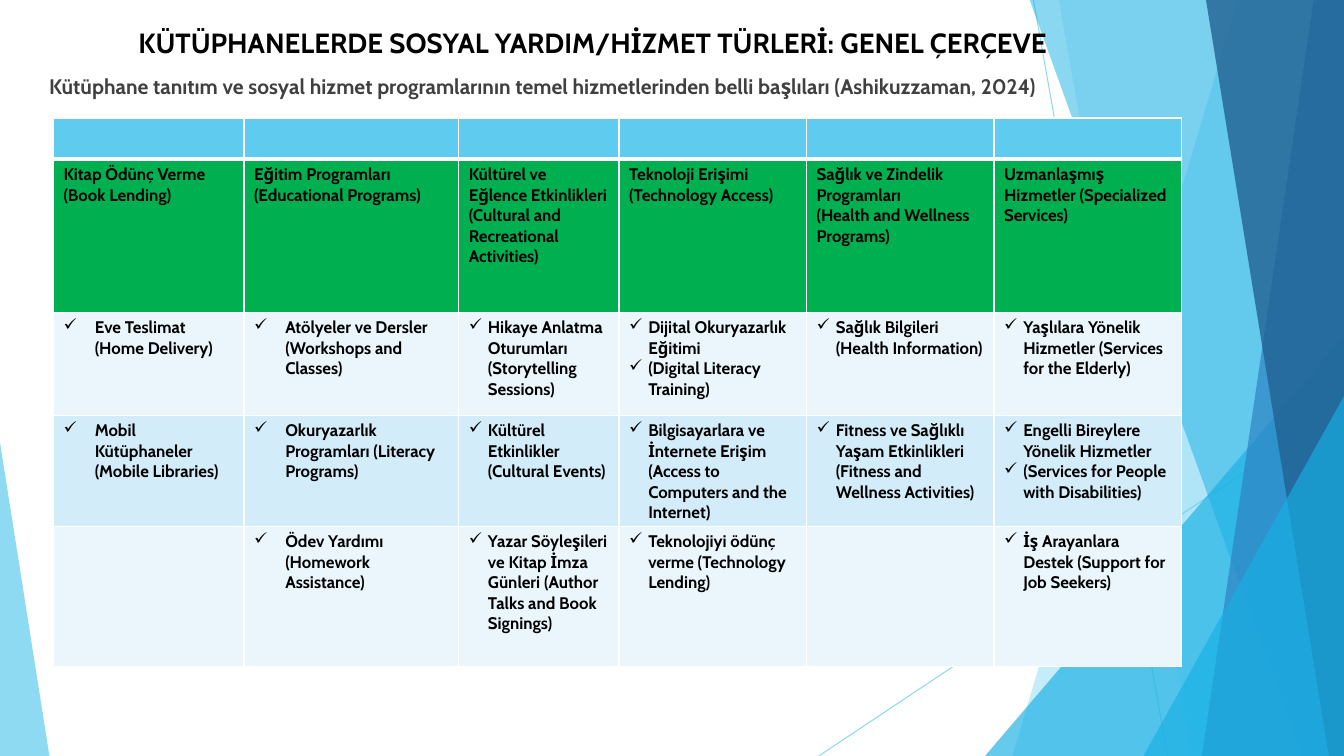
from dataclasses import dataclass

from lxml.etree import SubElement
from pptx import Presentation
from pptx.dml.color import RGBColor
from pptx.enum.shapes import MSO_CONNECTOR, MSO_SHAPE
from pptx.enum.text import MSO_ANCHOR, PP_ALIGN
from pptx.oxml import parse_xml
from pptx.oxml.ns import nsdecls, qn
from pptx.util import Inches, Pt

FONT = "Cabin"
COLORS = {
    "sky": "5FCBEF", "cyan": "17B0E4", "blue": "2E83C3", "navy": "226292",
    "green": "00B050", "pale": "EAF6FC", "light": "D2ECF9",
    "white": "FFFFFF", "black": "000000", "gray": "404040",
}
TOP, BOTTOM, RIGHT = -0.01, 7.5, 13.33


@dataclass
class Ray:
    start: tuple[float, float]
    end: tuple[float, float]


@dataclass
class Band:
    top_left: float
    bottom_left: float
    color: str
    opacity: int


@dataclass
class Triangle:
    left: float
    top: float
    width: float
    apex: float
    color: str
    opacity: int


@dataclass
class Row:
    height: float
    color: str
    texts: list[str]
    bulleted: bool = True


DECORATION = [
    Ray((10.25, 0), (11.58, 7.5)),
    Ray((13.33, 4.03), (8.12, 7.5)),
    Band(12.28, 10.04, "sky", 36),
    Band(10.5, 11.83, "sky", 20),
    Triangle(9.77, 3.33, 3.56, 1, "cyan", 66),
    Band(10.21, 12.91, "cyan", 50),
    Band(13.03, 11.92, "blue", 70),
    Band(11.96, 13.18, "navy", 80),
    Triangle(11.34, 3.93, 1.99, 1, "cyan", 66),
    Triangle(0, 4.39, 0.49, 0, "sky", 70),
]
COLUMN_WIDTHS = [1.89, 2.13, 1.59, 1.86, 1.86, 1.86]
COLUMN_INDENTS = [0.31, 0.31, 0.19, 0.19, 0.19, 0.19]
ROWS = [
    Row(0.41, "sky", [""] * 6, False),
    Row(1.52, "green", [
        "Kitap Ödünç Verme\n(Book Lending)",
        "Eğitim Programları (Educational Programs)",
        "Kültürel ve Eğlence Etkinlikleri (Cultural and Recreational Activities)",
        "Teknoloji Erişimi\n(Technology Access)",
        "Sağlık ve Zindelik Programları\n(Health and Wellness Programs)",
        "Uzmanlaşmış Hizmetler (Specialized Services)",
    ], False),
    Row(1.02, "pale", [
        "Eve Teslimat (Home Delivery)",
        "Atölyeler ve Dersler (Workshops and Classes)",
        "Hikaye Anlatma Oturumları (Storytelling Sessions)",
        "Dijital Okuryazarlık Eğitimi\n(Digital Literacy Training)",
        "Sağlık Bilgileri (Health Information)",
        "Yaşlılara Yönelik Hizmetler (Services for the Elderly)",
    ]),
    Row(1.02, "light", [
        "Mobil Kütüphaneler (Mobile Libraries)",
        "Okuryazarlık Programları (Literacy Programs)",
        "Kültürel Etkinlikler (Cultural Events)",
        "Bilgisayarlara ve İnternete Erişim (Access to Computers and the Internet)",
        "Fitness ve Sağlıklı Yaşam Etkinlikleri (Fitness and Wellness Activities)",
        "Engelli Bireylere Yönelik Hizmetler\n(Services for People with Disabilities)",
    ]),
    Row(1.39, "pale", [
        "",
        "Ödev Yardımı (Homework Assistance)",
        "Yazar Söyleşileri ve Kitap İmza Günleri (Author Talks and Book Signings)",
        "Teknolojiyi ödünç verme (Technology Lending)",
        "",
        "İş Arayanlara Destek (Support for Job Seekers)",
    ]),
]


def rgb(name: str) -> RGBColor:
    return RGBColor.from_string(COLORS[name])


def set_opacity(shape, opacity: int) -> None:
    for color in shape.element.spPr.iter(qn("a:srgbClr")):
        SubElement(color, qn("a:alpha"), val=str(opacity * 1000))


def paint(shape, color: str, opacity: int) -> None:
    shape.shadow.inherit = False
    shape.fill.solid()
    shape.fill.fore_color.rgb = rgb(color)
    shape.line.fill.background()
    set_opacity(shape, opacity)


def set_font(paragraph, size: float, color: str) -> None:
    font = paragraph.font
    font.name, font.size, font.bold = FONT, Pt(size), True
    font.color.rgb = rgb(color)


def draw_ray(slide, ray: Ray) -> None:
    ends = [Inches(value) for value in ray.start + ray.end]
    connector = slide.shapes.add_connector(MSO_CONNECTOR.STRAIGHT, *ends)
    connector.line.color.rgb = rgb("sky")
    connector.line.width = Pt(0.75)
    set_opacity(connector, 70)
    SubElement(connector.element.spPr, qn("a:effectLst"))


def draw_band(slide, band: Band) -> None:
    corners = [(RIGHT, TOP), (RIGHT, BOTTOM), (band.bottom_left, BOTTOM)]
    builder = slide.shapes.build_freeform(Inches(band.top_left), Inches(TOP))
    builder.add_line_segments([(Inches(x), Inches(y)) for x, y in corners])
    paint(builder.convert_to_shape(), band.color, band.opacity)


def draw_triangle(slide, triangle: Triangle) -> None:
    shape = slide.shapes.add_shape(
        MSO_SHAPE.ISOSCELES_TRIANGLE, Inches(triangle.left), Inches(triangle.top),
        Inches(triangle.width), Inches(BOTTOM - triangle.top))
    shape.adjustments[0] = triangle.apex
    paint(shape, triangle.color, triangle.opacity)


def add_bullet(paragraph, indent: float) -> None:
    properties = paragraph._p.get_or_add_pPr()
    properties.set("marL", str(Inches(indent)))
    properties.set("indent", str(-Inches(indent)))
    properties.insert(0, parse_xml(f'<a:buChar {nsdecls("a")} char="✓"/>'))


def add_borders(cell, top: int, bottom: int) -> None:
    properties = cell._tc.get_or_add_tcPr()
    widths = {"lnL": 1, "lnR": 1, "lnT": top, "lnB": bottom}
    for position, (side, width) in enumerate(widths.items()):
        properties.insert(position, parse_xml(
            f'<a:{side} {nsdecls("a")} w="{Pt(width)}"><a:solidFill>'
            f'<a:srgbClr val="{COLORS["white"]}"/></a:solidFill></a:{side}>'))


def draw_table(slide) -> None:
    table = slide.shapes.add_table(
        len(ROWS), len(COLUMN_WIDTHS), Inches(0.53), Inches(1.17),
        Inches(sum(COLUMN_WIDTHS)), Inches(sum(row.height for row in ROWS))).table
    for column, width in zip(table.columns, COLUMN_WIDTHS):
        column.width = Inches(width)
    for row_index, row in enumerate(ROWS):
        table.rows[row_index].height = Inches(row.height)
        for column_index, text in enumerate(row.texts):
            cell = table.cell(row_index, column_index)
            cell.text = text
            cell.fill.solid()
            cell.fill.fore_color.rgb = rgb(row.color)
            add_borders(cell, 3 if row_index == 1 else 1, 3 if row_index == 0 else 1)
            for paragraph in cell.text_frame.paragraphs:
                set_font(paragraph, 12, "black")
                if row.bulleted and text:
                    add_bullet(paragraph, COLUMN_INDENTS[column_index])


def write_text(shape, box: tuple[float, float, float, float], text: str, size: float,
               color: str, alignment: PP_ALIGN, anchor: MSO_ANCHOR) -> None:
    shape.left, shape.top, shape.width, shape.height = map(Inches, box)
    frame = shape.text_frame
    frame.text = text
    frame.word_wrap = True
    frame.vertical_anchor = anchor
    frame.paragraphs[0].alignment = alignment
    set_font(frame.paragraphs[0], size, color)


def main() -> None:
    presentation = Presentation()
    presentation.slide_width, presentation.slide_height = Inches(13.33), Inches(7.5)
    slide = presentation.slides.add_slide(presentation.slide_layouts[5])
    painters = {Ray: draw_ray, Band: draw_band, Triangle: draw_triangle}
    for item in DECORATION:
        painters[type(item)](slide, item)
    title = slide.shapes.title
    title.element.getparent().append(title.element)
    write_text(title, (0.98, 0.21, 9.79, 0.42),
               "KÜTÜPHANELERDE SOSYAL YARDIM/HİZMET TÜRLERİ: GENEL ÇERÇEVE",
               19.8, "black", PP_ALIGN.CENTER, MSO_ANCHOR.MIDDLE)
    subtitle = slide.shapes.add_textbox(0, 0, 0, 0)
    write_text(subtitle, (0.39, 0.68, 12.63, 6.6),
               "Kütüphane tanıtım ve sosyal hizmet programlarının temel hizmetlerinden "
               "belli başlıları (Ashikuzzaman, 2024)",
               15, "gray", PP_ALIGN.JUSTIFY, MSO_ANCHOR.TOP)
    draw_table(slide)
    presentation.save("out.pptx")


if __name__ == "__main__":
    main()
